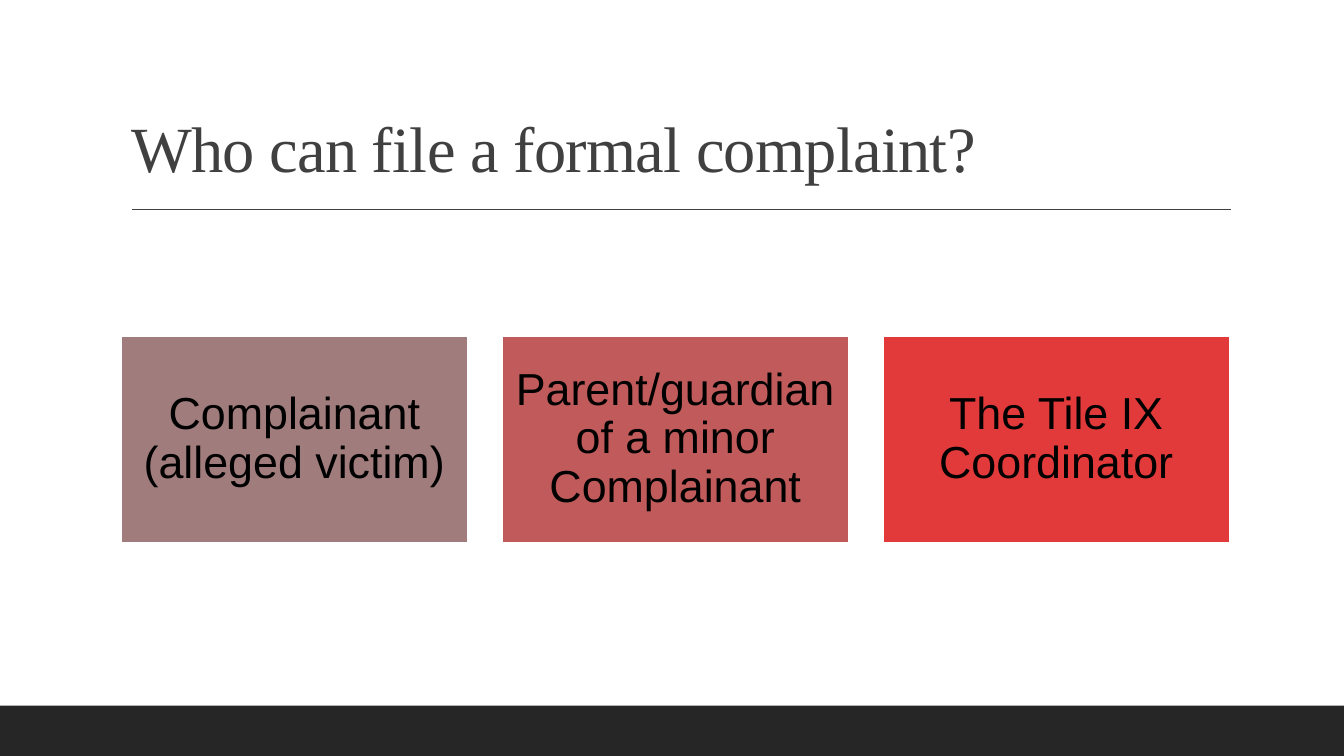
from pptx import Presentation
from pptx.dml.color import RGBColor
from pptx.enum.shapes import MSO_CONNECTOR, MSO_SHAPE
from pptx.enum.text import MSO_ANCHOR, MSO_AUTO_SIZE, PP_ALIGN
from pptx.oxml.ns import qn
from pptx.util import Cm, Pt
from lxml.etree import SubElement

WIDTH, HEIGHT = 33.87, 19.05
LEFT, BOX_TOP = 3.05, 8.46
BOX_WIDTH, BOX_HEIGHT, BOX_PITCH = 8.74, 5.23, 9.6
FILERS = [
    ("Complainant (alleged victim)", "A07C7C"),
    ("Parent/guardian of a minor Complainant", "C15B5B"),
    ("The Tile IX Coordinator", "E23A3A"),
]


def color(hex_string):
    return RGBColor.from_string(hex_string)


def style_text(frame, font_name, size, font_color, align, anchor):
    frame.word_wrap = True
    frame.auto_size = MSO_AUTO_SIZE.NONE
    frame.vertical_anchor = anchor
    para = frame.paragraphs[0]
    para.alignment = align
    para.line_spacing = 0.9
    para.font.name = font_name
    para.font.size = Pt(size)
    para.font.color.rgb = color(font_color)


def set_title(page, text):
    title = page.shapes.title
    title.left, title.top = Cm(LEFT), Cm(0.79)
    title.width, title.height = Cm(27.94), Cm(4.04)
    frame = title.text_frame
    frame.text = text
    style_text(frame, "Times New Roman", 46, "404040",
               PP_ALIGN.LEFT, MSO_ANCHOR.BOTTOM)
    span = frame.paragraphs[0].runs[0]
    span.font._element.set("spc", "-50")


def add_rectangle(page, left, top, width, height, fill):
    box = page.shapes.add_shape(MSO_SHAPE.RECTANGLE, Cm(left), Cm(top),
                                Cm(width), Cm(height))
    box.shadow.inherit = False
    box.fill.solid()
    box.fill.fore_color.rgb = color(fill)
    box.line.fill.background()
    return box


def add_filer_box(page, left, text, fill):
    box = add_rectangle(page, left, BOX_TOP, BOX_WIDTH, BOX_HEIGHT, fill)
    box.line.color.rgb = color("FFFFFF")
    box.line.width = Pt(1.25)
    frame = box.text_frame
    frame.margin_left = frame.margin_right = Cm(0.32)
    frame.margin_top = frame.margin_bottom = Cm(0.32)
    frame.text = text
    style_text(frame, "Arial", 32, "000000",
               PP_ALIGN.CENTER, MSO_ANCHOR.MIDDLE)


def add_rule(page, left, right, top):
    rule = page.shapes.add_connector(MSO_CONNECTOR.STRAIGHT, Cm(left), Cm(top),
                                     Cm(right), Cm(top))
    rule.line.color.rgb = color("404040")
    rule.line.width = Pt(1)
    SubElement(rule._element.spPr, qn("a:effectLst"))


def main():
    deck = Presentation()
    deck.slide_width, deck.slide_height = Cm(WIDTH), Cm(HEIGHT)
    page = deck.slides.add_slide(deck.slide_layouts[5])
    add_rectangle(page, 0, 17.78, WIDTH, HEIGHT - 17.78, "262626")
    add_rule(page, 3.33, 31.01, 5.28)
    set_title(page, "Who can file a formal complaint?")
    for index, (text, fill) in enumerate(FILERS):
        add_filer_box(page, LEFT + index * BOX_PITCH, text, fill)
    deck.save("out.pptx")


if __name__ == "__main__":
    main()
